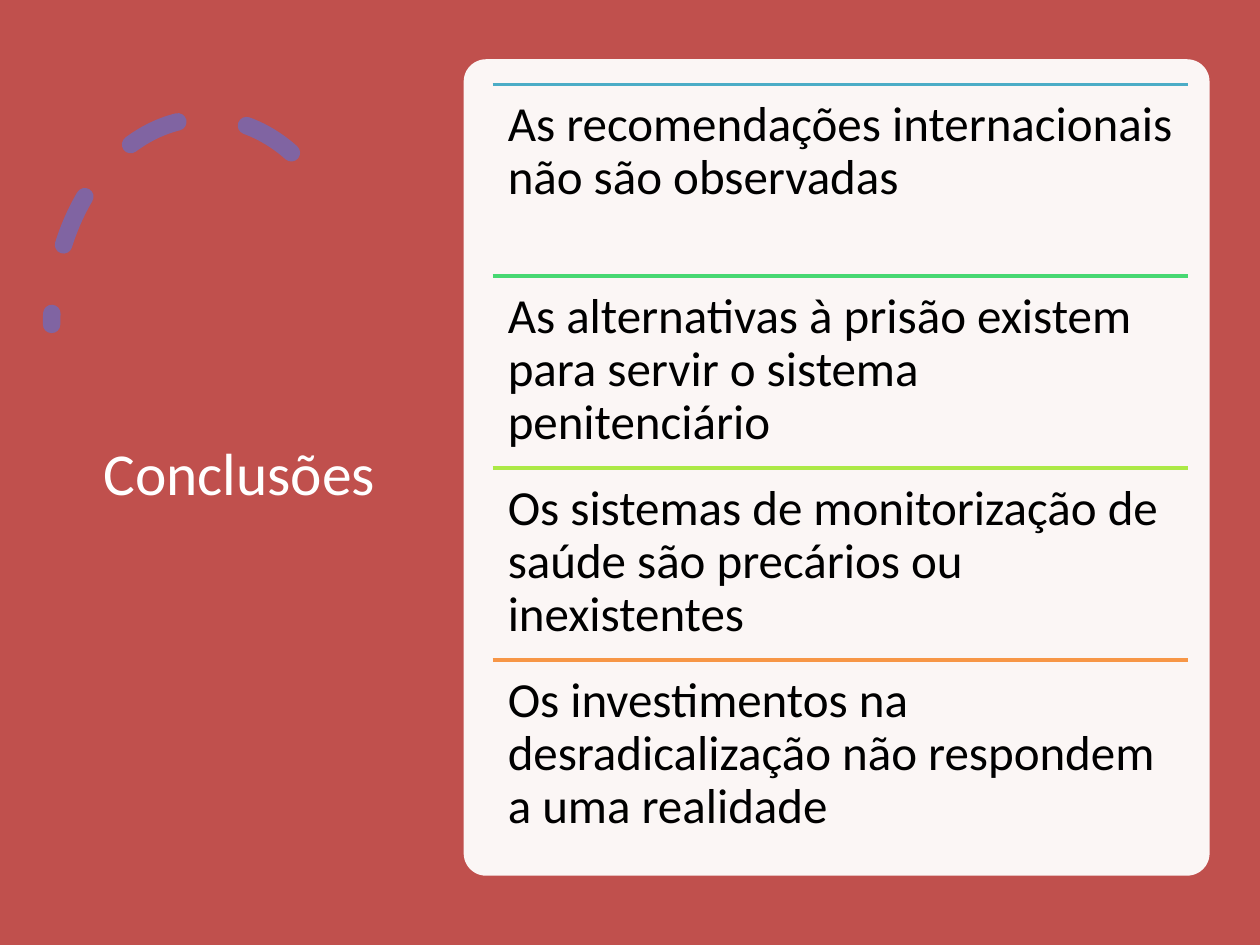
import collections

import lxml.etree
import pptx
import pptx.dml.color
import pptx.enum.dml
import pptx.enum.shapes
import pptx.enum.text
import pptx.oxml.ns
import pptx.util

RGBColor = pptx.dml.color.RGBColor
MSO_SHAPE = pptx.enum.shapes.MSO_SHAPE
RED = RGBColor(0xC0, 0x50, 0x4D)
PURPLE = RGBColor(0x80, 0x64, 0xA2)
WHITE = RGBColor(0xFF, 0xFF, 0xFF)
BLACK = RGBColor(0x00, 0x00, 0x00)
TEAL = RGBColor(0x4B, 0xAC, 0xC6)
GREEN = RGBColor(0x47, 0xD8, 0x72)
LIME = RGBColor(0xAC, 0xE9, 0x46)
ORANGE = RGBColor(0xF7, 0x96, 0x46)

WIDTH, HEIGHT = pptx.util.Inches(10), pptx.util.Inches(7.5)
COLUMNS = ROWS = 100
Box = collections.namedtuple("Box", "left top width height")

CONCLUSIONS = [
    (TEAL, "As recomendações internacionais não são observadas"),
    (GREEN, "As alternativas à prisão existem para servir o sistema penitenciário"),
    (LIME, "Os sistemas de monitorização de saúde são precários ou inexistentes"),
    (ORANGE, "Os investimentos na desradicalização não respondem a uma realidade"),
]


def on_slide(box):
    """Turn a box of grid columns and rows into slide lengths."""
    x, y = WIDTH / COLUMNS, HEIGHT / ROWS
    return [round(n * unit) for n, unit in zip(box, (x, y, x, y))]


def apply_format(target, values):
    """Set every attribute named in a dict of format values."""
    for name, value in values.items():
        setattr(target, name, value)


def add_child(parent, tag, **attributes):
    """Append a DrawingML element to a parent element."""
    child = lxml.etree.SubElement(parent, pptx.oxml.ns.qn(tag))
    for name, value in attributes.items():
        child.set(name, value)
    return child


def add_panel(shapes, preset, box, color):
    """Add a plain filled shape without outline or shadow."""
    panel = shapes.add_shape(preset, *on_slide(box))
    panel.shadow.inherit = False
    panel.fill.solid()
    panel.fill.fore_color.rgb = color
    panel.line.fill.background()
    return panel


def add_words(shapes, box, words, frame_format, paragraph_format, size, color):
    """Add a wrapped text box holding one paragraph."""
    frame = shapes.add_textbox(*on_slide(box)).text_frame
    apply_format(frame, {"word_wrap": True, **frame_format})
    paragraph = frame.paragraphs[0]
    apply_format(paragraph, paragraph_format)
    run = paragraph.add_run()
    run.text = words
    apply_format(run.font, {"name": "Calibri", "size": pptx.util.Pt(size)})
    run.font.color.rgb = color


def add_dashed_arc(shapes, box):
    """Draw the mirrored, round-capped dashed arc above the heading."""
    arc = shapes.add_shape(MSO_SHAPE.ARC, *on_slide(box))
    arc.shadow.inherit = False
    arc.adjustments[0], arc.adjustments[1] = 146.13, 0
    arc.fill.background()
    arc.line.color.rgb = PURPLE
    apply_format(arc.line, {"width": pptx.util.Pt(10),
                            "dash_style": pptx.enum.dml.MSO_LINE.DASH})
    arc.line._get_or_add_ln().set("cap", "rnd")
    arc._element.spPr.xfrm.set("flipH", "1")


def add_heading(shapes, box):
    """Centre the slide title in its box."""
    add_words(shapes, box, "Conclusões",
              {"vertical_anchor": pptx.enum.text.MSO_ANCHOR.MIDDLE},
              {"alignment": pptx.enum.text.PP_ALIGN.CENTER}, 34, WHITE)


def add_card(shapes, box):
    """Add the rounded, slightly transparent card."""
    card = add_panel(shapes, MSO_SHAPE.ROUNDED_RECTANGLE, box, WHITE)
    card.adjustments[0] = 0.03
    tint = card._element.spPr.find(".//" + pptx.oxml.ns.qn("a:srgbClr"))
    add_child(tint, "a:alpha", val="95000")


def add_conclusions(shapes, box):
    """Stack the conclusions in equal rows, each under a coloured rule."""
    group = shapes.add_group_shape().shapes
    row_height = box.height / len(CONCLUSIONS)
    margins = ("margin_left", "margin_top", "margin_right", "margin_bottom")
    inset = dict.fromkeys(margins, pptx.util.Inches(0.12))
    spacing = {"line_spacing": 0.9, "space_after": pptx.util.Pt(9.8)}
    for index, (color, conclusion) in enumerate(CONCLUSIONS):
        row = box._replace(top=box.top + index * row_height, height=row_height)
        left, top, width, _ = on_slide(row)
        rule = group.add_connector(pptx.enum.shapes.MSO_CONNECTOR.STRAIGHT,
                                   left, top, left + width, top)
        rule.line.color.rgb = color
        rule.line.width = pptx.util.Pt(2)
        add_child(rule._element.spPr, "a:effectLst")
        add_words(group, row, conclusion, inset, spacing, 28, BLACK)


def main():
    """Build and save the conclusions slide."""
    deck = pptx.Presentation()
    apply_format(deck, {"slide_width": WIDTH, "slide_height": HEIGHT})
    shapes = deck.slides.add_slide(deck.slide_layouts[6]).shapes
    add_panel(shapes, MSO_SHAPE.RECTANGLE, Box(0, 0, COLUMNS, ROWS), RED)
    add_dashed_arc(shapes, Box(4.1, 12.53, 24.5, 43.6))
    add_heading(shapes, Box(6.9, 9.33, 24.2, 81.2))
    add_card(shapes, Box(36.8, 6.27, 59.2, 86.4))
    add_conclusions(shapes, Box(39.1, 8.93, 55.2, 81.2))
    deck.save("out.pptx")


if __name__ == "__main__":
    main()
